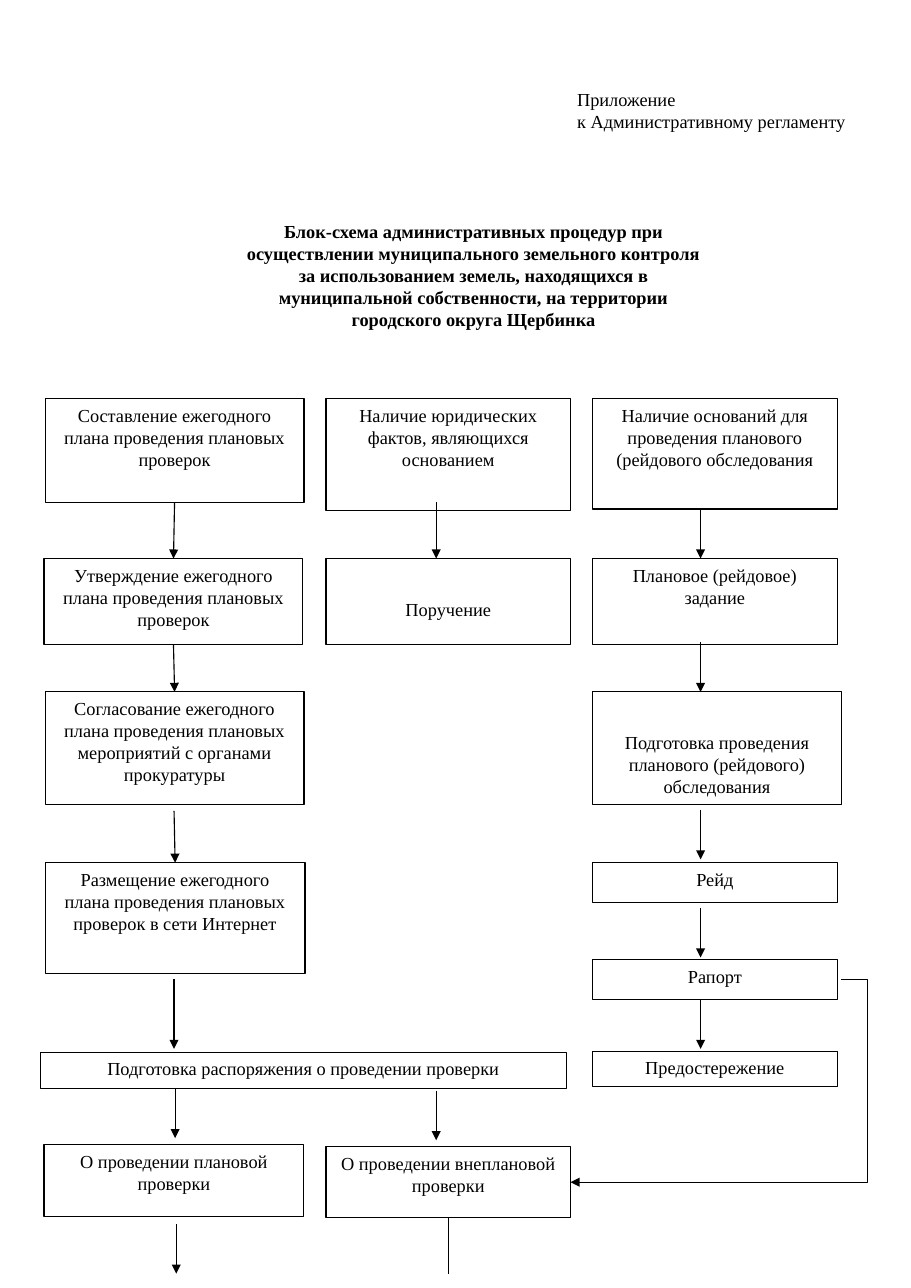
from lxml import etree
from pptx import Presentation
from pptx.dml.color import RGBColor
from pptx.enum.shapes import MSO_CONNECTOR as Link, MSO_SHAPE as Shape
from pptx.enum.text import MSO_ANCHOR as Anchor, MSO_AUTO_SIZE as AutoSize, PP_ALIGN as Align
from pptx.oxml.ns import qn
from pptx.util import Inches, Pt

# Content
FONT, SIZE = "Times New Roman", 12
INK, PAPER = "000000", "FFFFFF"
APPENDIX = ["Приложение", "к Административному регламенту"]
TITLE = ["Блок-схема административных процедур при осуществлении муниципального "
         "земельного контроля за использованием земель, находящихся в муниципальной "
         "собственности, на территории городского округа Щербинка"]

# Columns: left edge and usual width; rows: top edge
PLANNED, UNPLANNED, RAID = (0.41, 2.35), (2.96, 2.22), (5.38, 2.22)
ROW_1, ROW_2, ROW_3, ROW_4 = 3.62, 5.07, 6.28, 7.83
TOP_INSET, LOW_INSET = 0.05, 0.36

# Step: (column, top, height, text inset, text)
STEPS = {
    "plan": (PLANNED, ROW_1, 0.94, TOP_INSET,
             "Составление ежегодного плана проведения плановых проверок"),
    "facts": (UNPLANNED, ROW_1, 1.01, TOP_INSET,
              "Наличие юридических фактов, являющихся основанием"),
    "grounds": (RAID, ROW_1, 1, TOP_INSET,
                "Наличие оснований для проведения планового (рейдового обследования"),
    "approval": ((0.4, 2.35), ROW_2, 0.78, TOP_INSET,
                 "Утверждение ежегодного плана проведения плановых проверок"),
    "order": (UNPLANNED, ROW_2, 0.78, LOW_INSET, "Поручение"),
    "task": (RAID, ROW_2, 0.78, TOP_INSET, "Плановое (рейдовое) задание"),
    "agreement": (PLANNED, ROW_3, 1.02, TOP_INSET,
                  "Согласование ежегодного плана проведения плановых мероприятий "
                  "с органами прокуратуры"),
    "preparation": ((5.38, 2.26), ROW_3, 1.02, LOW_INSET,
                    "Подготовка проведения планового (рейдового) обследования"),
    "publication": ((0.41, 2.36), ROW_4, 1.01, TOP_INSET,
                    "Размещение ежегодного плана проведения плановых проверок "
                    "в сети Интернет"),
    "raid": (RAID, ROW_4, 0.36, TOP_INSET, "Рейд"),
    "report": (RAID, 8.71, 0.36, TOP_INSET, "Рапорт"),
    "warning": (RAID, 9.54, 0.32, TOP_INSET, "Предостережение"),
    "directive": ((0.37, 4.77), 9.55, 0.33, TOP_INSET,
                  "Подготовка распоряжения о проведении проверки"),
    "planned check": ((0.4, 2.36), 10.39, 0.65, TOP_INSET, "О проведении плановой проверки"),
    "unplanned check": (UNPLANNED, 10.41, 0.64, TOP_INSET,
                        "О проведении внеплановой проверки"),
}

# Vertical arrow: (x, from y, to y, step it leaves, step it enters)
ARROWS = [
    (1.58, 4.56, 5.07, "plan", "approval"),
    (1.58, 5.85, 6.28, "approval", "agreement"),
    (1.58, 7.36, 7.83, None, "publication"),
    (1.58, 8.89, 9.52, None, None),
    (1.59, 9.88, 10.33, None, None),
    (1.6, 11.11, 11.56, None, None),
    (3.96, 4.56, 5.07, None, None),
    (3.96, 9.9, 10.35, None, None),
    (6.36, 4.62, 5.07, None, None),
    (6.36, 5.83, 6.28, None, None),
    (6.36, 7.35, 7.8, None, None),
    (6.36, 8.24, 8.69, None, None),
    (6.36, 9.07, 9.52, None, None),
]
TOP, BOTTOM, RIGHT = 0, 2, 3

deck = Presentation()
deck.slide_width, deck.slide_height = Inches(8.27), Inches(11.69)
slide = deck.slides.add_slide(deck.slide_layouts[6])


def paint(color_format, value):
    color_format.rgb = RGBColor.from_string(value)


def write(frame, lines, align, bold=False, after=0):
    frame.word_wrap = True
    frame.vertical_anchor = Anchor.TOP
    for index, line in enumerate(lines):
        paragraph = frame.paragraphs[0] if index == 0 else frame.add_paragraph()
        paragraph.alignment = align
        paragraph.space_after = Pt(after)
        run = paragraph.add_run()
        run.text = line
        run.font.name, run.font.size, run.font.bold = FONT, Pt(SIZE), bold
        paint(run.font.color, INK)


def add_label(left, top, width, height, lines, align, bold=False):
    frame = slide.shapes.add_textbox(*map(Inches, (left, top, width, height))).text_frame
    write(frame, lines, align, bold)
    frame.auto_size = AutoSize.SHAPE_TO_FIT_TEXT


def add_step(column, top, height, inset, text):
    left, width = column
    box = slide.shapes.add_shape(Shape.RECTANGLE, *map(Inches, (left, top, width, height)))
    box.shadow.inherit = False
    box.fill.solid()
    paint(box.fill.fore_color, PAPER)
    box.line.width = Pt(0.75)
    paint(box.line.color, INK)
    box.text_frame.margin_top = Inches(inset)
    write(box.text_frame, [text], Align.CENTER, after=8)
    return box


def add_link(kind, start, end, weight=0.75, arrow=True):
    link = slide.shapes.add_connector(kind, *map(Inches, (*start, *end)))
    link.line.width = Pt(weight)
    paint(link.line.color, INK)
    if arrow:
        etree.SubElement(link.line._get_or_add_ln(), qn("a:tailEnd"), type="triangle")
    etree.SubElement(link._element.spPr, qn("a:effectLst"))
    return link


# Headings
add_label(5.14, 0.75, 2.72, 0.5, APPENDIX, Align.JUSTIFY)
add_label(2.05, 1.95, 4.5, 1.11, TITLE, Align.CENTER, bold=True)

# Steps
boxes = {name: add_step(*step) for name, step in STEPS.items()}

# Vertical arrows
for x, start_y, end_y, source, target in ARROWS:
    arrow = add_link(Link.STRAIGHT, (x, start_y), (x, end_y))
    if source:
        arrow.begin_connect(boxes[source], BOTTOM)
    if target:
        arrow.end_connect(boxes[target], TOP)

# Line running on below the unplanned check
tail = add_link(Link.STRAIGHT, (4.07, 11.05), (4.07, 11.56), weight=1, arrow=False)
tail.begin_connect(boxes["unplanned check"], BOTTOM)

# Bent arrow from the report round to the unplanned check
detour = add_link(Link.ELBOW, (7.64, 8.89), (5.18, 10.73), weight=0.5)
detour.end_connect(boxes["unplanned check"], RIGHT)
adjustments = detour._element.spPr.find(qn("a:prstGeom")).find(qn("a:avLst"))
etree.SubElement(adjustments, qn("a:gd"), name="adj1", fmla="val -9500")

deck.save("out.pptx")
